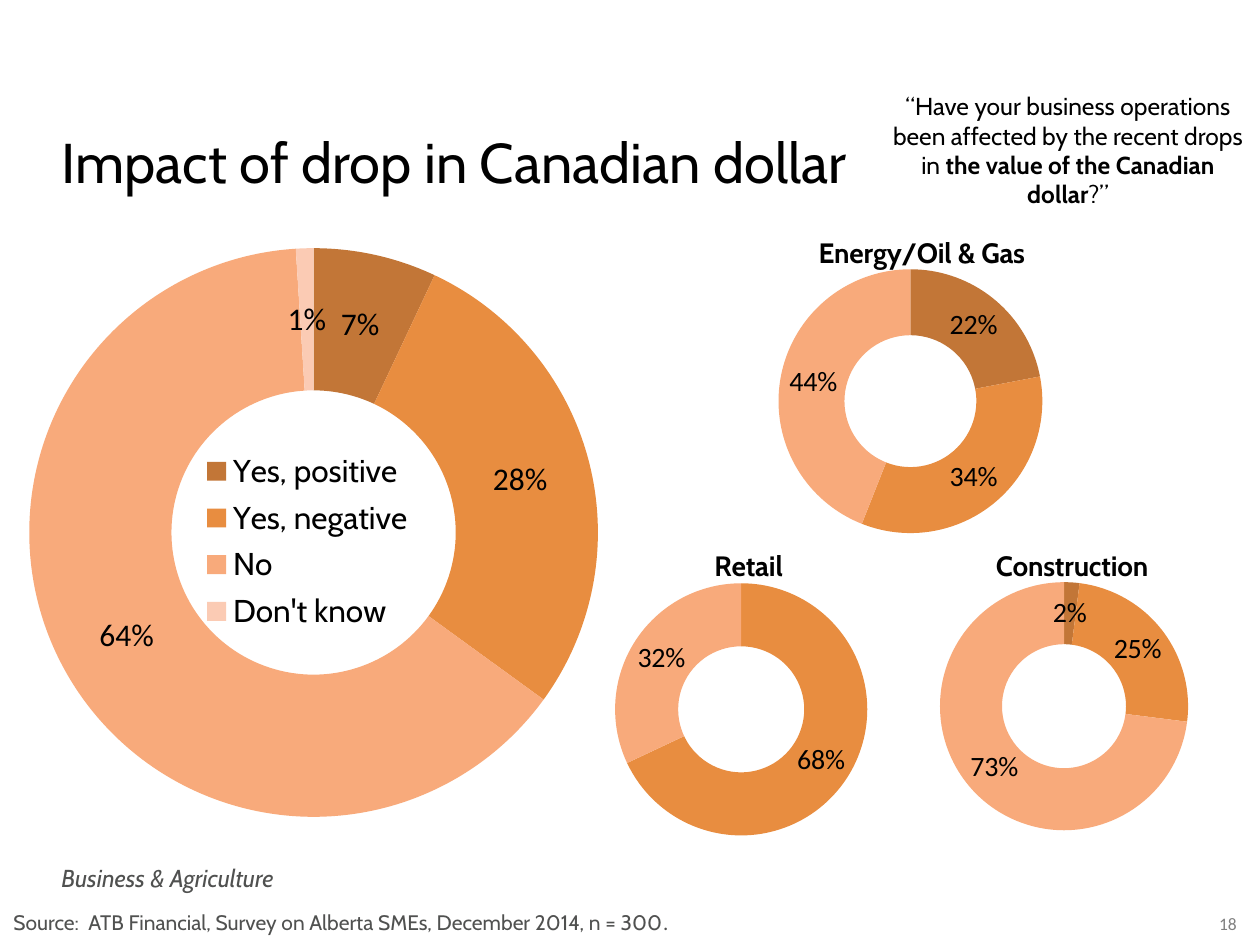
from dataclasses import dataclass

from lxml import etree
from pptx import Presentation
from pptx import util as u
from pptx.chart.data import CategoryChartData
from pptx.dml.color import RGBColor
from pptx.enum import chart as ce, text
from pptx.oxml.ns import qn


@dataclass(frozen=True)
class Theme:
    font: str = "Cabin"
    digits: str = "Calibri"
    ink: str = "000000"
    muted: str = "505150"
    pale: str = "808080"
    slices: tuple = ("C27637", "E88D40", "F8AA7B", "FBCBB4")
    title: int = 32
    legend: int = 18
    head: int = 16
    body: int = 14
    source: int = 12
    page: int = 10


T = Theme()
PX = u.Inches(1) / 126


def style(font, size, color=T.ink, name=T.font, bold=False, italic=False):
    font.size, font.name = u.Pt(size), name
    font.bold, font.italic = bold, italic
    font.color.rgb = RGBColor.from_string(color)


def place(elem, inner=False, **box):
    """Give a chart part a manual layout, in fractions of the chart."""
    old = elem.find(qn("c:layout"))
    if old is not None:
        elem.remove(old)
    layout = etree.Element(qn("c:layout"))
    manual = etree.SubElement(layout, qn("c:manualLayout"))
    rows = [("layoutTarget", "inner")] if inner else []
    rows += [("xMode", "edge"), ("yMode", "edge"), *box.items()]
    for tag, val in rows:
        etree.SubElement(manual, qn(f"c:{tag}")).set("val", str(val))
    lead = [c for c in elem if c.tag in (qn("c:tx"), qn("c:legendPos"))]
    elem.insert(len(lead), layout)


prs = Presentation()
prs.slide_width, prs.slide_height = u.Inches(10), u.Inches(7.5)
slide = prs.slides.add_slide(prs.slide_layouts[5])

# Title
title = slide.shapes.title
title.left, title.top, title.width, title.height = (
    int(n * PX) for n in (49, 121, 1162, 99))
frame = title.text_frame
frame.text = "Impact of drop in Canadian dollar"
frame.vertical_anchor = text.MSO_ANCHOR.TOP
frame.paragraphs[0].alignment = text.PP_ALIGN.LEFT
style(frame.paragraphs[0].runs[0].font, T.title)

# Question, source, section and page number
LEFT, MID = text.PP_ALIGN.LEFT, text.PP_ALIGN.CENTER
plain = dict(size=T.body)
note = dict(size=T.source, color=T.muted)
notes = [
    ((876, 85, 384, 131), MID, [
        ("“Have your business operations been affected by the recent "
         "drops in ", plain),
        ("the value of the Canadian dollar", dict(plain, bold=True)),
        ("?”", plain)]),
    ((49, 857, 354, 43), LEFT, [
        ("Business & Agriculture",
         dict(size=T.body, color=T.muted, italic=True))]),
    ((1, 903, 1173, 38), LEFT, [
        ("Source:  ATB Financial, Survey on Alberta SMEs, "
         "December 2014, n = 300", note),
        (".", dict(note, name=T.digits))]),
    ((1197, 907, 62, 34), MID, [
        ("18", dict(size=T.page, color=T.pale, name=T.digits))]),
]
for box, align, runs in notes:
    frame = slide.shapes.add_textbox(*(int(n * PX) for n in box)).text_frame
    frame.word_wrap = True
    para = frame.paragraphs[0]
    para.alignment = align
    for words, look in runs:
        run = para.add_run()
        run.text = words
        style(run.font, **look)

# Doughnuts: all firms with the legend in the hole, then three sectors
answers = ["Yes, positive", "Yes, negative", "No", "Don't know"]
big = dict(x=0.01, y=0, w=0.91, h=0.96)
small = dict(x=0.03, y=0.11, w=0.83, h=0.94)
rings = [
    ("", 0, (23, 248, 625, 593), (0.07, 0.28, 0.64, 0.01)),
    ("Energy/Oil & Gas", 0.14, (769, 229, 318, 325), (0.22, 0.34, 0.44, 0)),
    ("Retail", 0.34, (606, 542, 304, 316), (0, 0.68, 0.32, 0)),
    ("Construction", 0.2, (931, 542, 299, 310), (0.02, 0.25, 0.73, 0)),
]
for head, start, box, vals in rings:
    data = CategoryChartData(number_format="0%")
    data.categories = ["1", "2", "3", "4"] if head else answers
    data.add_series("Series 1", vals)
    chart = slide.shapes.add_chart(
        ce.XL_CHART_TYPE.DOUGHNUT, *(int(n * PX) for n in box), data).chart
    style(chart.font, T.legend)
    chart.has_title = bool(head)
    chart.has_legend = not head
    if head:
        para = chart.chart_title.text_frame.paragraphs[0]
        para.text = head
        style(para.runs[0].font, T.head, bold=True)
        place(chart.chart_title._element, x=start, y=0)
    else:
        chart.legend.position = ce.XL_LEGEND_POSITION.LEFT
        chart.legend.include_in_layout = False
        style(chart.legend.font, T.legend)
        place(chart.legend._element, x=0.28, y=0.33, w=0.35, h=0.33)
    plot = chart.plots[0]
    plot.vary_by_categories = True
    series = plot.series[0]
    for i, color in enumerate(T.slices):
        look = series.points[i].format
        look.fill.solid()
        look.fill.fore_color.rgb = RGBColor.from_string(color)
        look.line.fill.background()
    labels = series.data_labels
    labels.show_value = True
    labels.show_percentage = False
    labels.number_format = "0%;;"  # leaves zero slices unlabelled
    labels.number_format_is_linked = False
    style(labels.font, T.head if head else T.legend, name=T.digits)
    area = chart._chartSpace.chart.plotArea
    place(area, inner=True, **(small if head else big))

prs.save("out.pptx")
